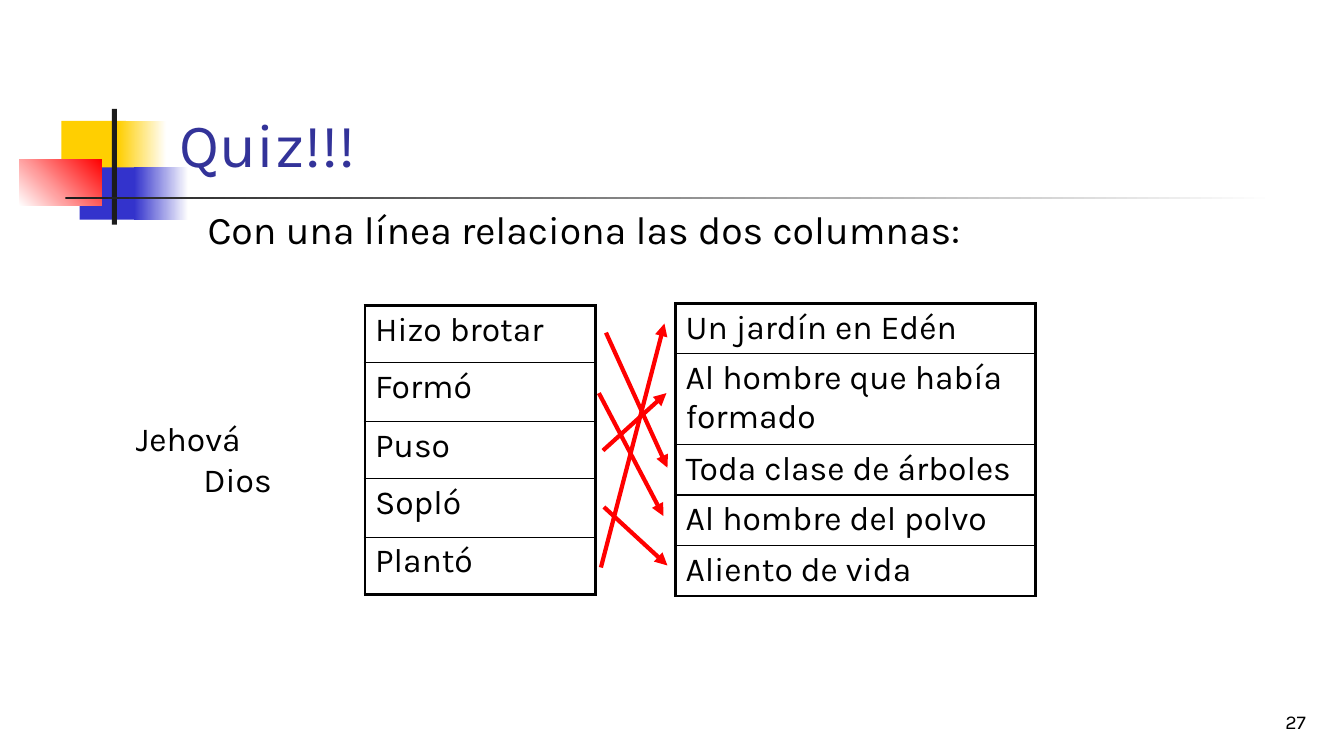
from dataclasses import dataclass

from lxml.etree import SubElement
from pptx import Presentation
from pptx.dml.color import RGBColor
from pptx.enum.shapes import MSO_CONNECTOR, MSO_SHAPE
from pptx.enum.text import MSO_ANCHOR, PP_ALIGN
from pptx.oxml import parse_xml
from pptx.oxml.ns import nsdecls, qn
from pptx.slide import Slide
from pptx.text.text import TextFrame
from pptx.util import Emu, Pt

FONT = "Karla"
BLACK, WHITE, RED = "000000", "FFFFFF", "FF0000"
YELLOW, BLUE, CHARCOAL, TITLE_BLUE = "FFCF01", "3333CC", "1C1C1C", "333399"
OUTER_BORDER, INNER_BORDER = 2.25, 1


@dataclass(frozen=True)
class Block:
    """A rectangle of the title ornament, fading to a second colour if given."""

    left: int
    top: int
    width: int
    height: int
    start: str
    end: str = ""
    angle: int = 0


@dataclass(frozen=True)
class Column:
    """A one-column table of the matching exercise."""

    left: int
    top: int
    width: int
    heights: tuple[int, ...]
    answers: tuple[str, ...]


@dataclass(frozen=True)
class Match:
    """An arrow from a verb to its object."""

    x1: int
    y1: int
    x2: int
    y2: int


ORNAMENT = (
    Block(61, 120, 64, 52, YELLOW),
    Block(117, 120, 48, 52, YELLOW, WHITE),
    Block(79, 166, 62, 52, BLUE),
    Block(133, 166, 54, 52, BLUE, WHITE),
    Block(19, 158, 82, 46, WHITE, RED, 45),
    Block(111, 108, 5, 115, CHARCOAL),
    Block(65, 195, 1200, 3, CHARCOAL, WHITE),
)
COLUMNS = (
    Column(362, 303, 229, (57, 58, 57, 58, 57),
           ("Hizo brotar", "Formó", "Puso", "Sopló", "Plantó")),
    Column(670, 301, 357, (50, 90, 50, 50, 50),
           ("Un jardín en Edén", "Al hombre que había formado",
            "Toda clase de árboles", "Al hombre del polvo", "Aliento de vida")),
)
MATCHES = (
    Match(601, 330, 662, 464),
    Match(594, 390, 658, 512),
    Match(598, 447, 661, 390),
    Match(599, 503, 662, 561),
    Match(596, 563, 659, 321),
)


def px(length: int) -> Emu:
    """Turn px, a hundred to the inch, into EMU."""
    return Emu(length * 9144)


def colour(value: str) -> RGBColor:
    """Turn a hex string into a colour."""
    return RGBColor.from_string(value)


def write(frame: TextFrame, text: str, *, size: int = 24, color: str = BLACK,
          align: PP_ALIGN = PP_ALIGN.LEFT, anchor: MSO_ANCHOR = MSO_ANCHOR.TOP,
          hanging: int = 0) -> None:
    """Put formatted text into a frame."""
    frame.word_wrap = True
    frame.vertical_anchor = anchor
    paragraph = frame.paragraphs[0]
    paragraph.alignment = align
    if hanging:
        properties = paragraph._p.get_or_add_pPr()
        properties.set("marL", str(px(hanging)))
        properties.set("indent", str(-px(hanging)))
    run = paragraph.add_run()
    run.text = text
    run.font.name = FONT
    run.font.size = Pt(size)
    run.font.color.rgb = colour(color)


def add_text(slide: Slide, left: int, top: int, width: int, height: int,
             text: str, **style) -> None:
    """Add a text box."""
    box = slide.shapes.add_textbox(px(left), px(top), px(width), px(height))
    write(box.text_frame, text, **style)


def add_block(slide: Slide, block: Block) -> None:
    """Draw one rectangle of the ornament."""
    shape = slide.shapes.add_shape(MSO_SHAPE.RECTANGLE, px(block.left), px(block.top),
                                   px(block.width), px(block.height))
    shape.shadow.inherit = False
    shape.line.fill.background()
    if block.end:
        shape.fill.gradient()
        shape.fill.gradient_angle = block.angle
        for stop, shade in zip(shape.fill.gradient_stops, (block.start, block.end)):
            stop.color.rgb = colour(shade)
    else:
        shape.fill.solid()
        shape.fill.fore_color.rgb = colour(block.start)


def add_column(slide: Slide, column: Column) -> None:
    """Draw one bordered column of answers."""
    count = len(column.answers)
    table = slide.shapes.add_table(count, 1, px(column.left), px(column.top),
                                   px(column.width), px(sum(column.heights))).table
    table.first_row = table.horz_banding = False
    for index, (answer, height) in enumerate(zip(column.answers, column.heights)):
        table.rows[index].height = px(height)
        cell = table.cell(index, 0)
        cell.fill.background()
        write(cell.text_frame, answer)
        borders = {
            "lnL": OUTER_BORDER,
            "lnR": OUTER_BORDER,
            "lnT": OUTER_BORDER if index == 0 else INNER_BORDER,
            "lnB": OUTER_BORDER if index == count - 1 else INNER_BORDER,
        }
        for position, (side, points) in enumerate(borders.items()):
            cell._tc.get_or_add_tcPr().insert(position, parse_xml(
                f'<a:{side} {nsdecls("a")} w="{Pt(points)}"><a:solidFill>'
                f'<a:srgbClr val="{BLACK}"/></a:solidFill></a:{side}>'))


def add_match(slide: Slide, match: Match) -> None:
    """Draw one red arrow between the columns."""
    arrow = slide.shapes.add_connector(MSO_CONNECTOR.STRAIGHT, px(match.x1), px(match.y1),
                                       px(match.x2), px(match.y2))
    arrow.line.color.rgb = colour(RED)
    arrow.line.width = Pt(3)
    SubElement(arrow.line._get_or_add_ln(), qn("a:tailEnd"), type="triangle")
    SubElement(arrow._element.spPr, qn("a:effectLst"))


def add_title(slide: Slide, text: str) -> None:
    """Place the title in front of the ornament."""
    title = slide.shapes.title
    title.left, title.top, title.width, title.height = map(px, (168, 23, 1136, 160))
    write(title.text_frame, text, size=44, color=TITLE_BLUE, anchor=MSO_ANCHOR.BOTTOM)
    title._element.getparent().append(title._element)


def main() -> None:
    """Build and save the quiz slide."""
    presentation = Presentation()
    presentation.slide_width, presentation.slide_height = px(1333), px(750)
    slide = presentation.slides.add_slide(presentation.slide_layouts[5])
    for block in ORNAMENT:
        add_block(slide, block)
    add_title(slide, "Quiz!!!")
    add_text(slide, 1027, 683, 278, 50, "27", size=14,
             align=PP_ALIGN.RIGHT, anchor=MSO_ANCHOR.BOTTOM)
    add_text(slide, 196, 199, 778, 55, "Con una línea relaciona las dos columnas:", size=28)
    add_text(slide, 125, 410, 190, 50, "Jehová Dios", hanging=67)
    for column in COLUMNS:
        add_column(slide, column)
    for match in MATCHES:
        add_match(slide, match)
    presentation.save("out.pptx")


if __name__ == "__main__":
    main()
